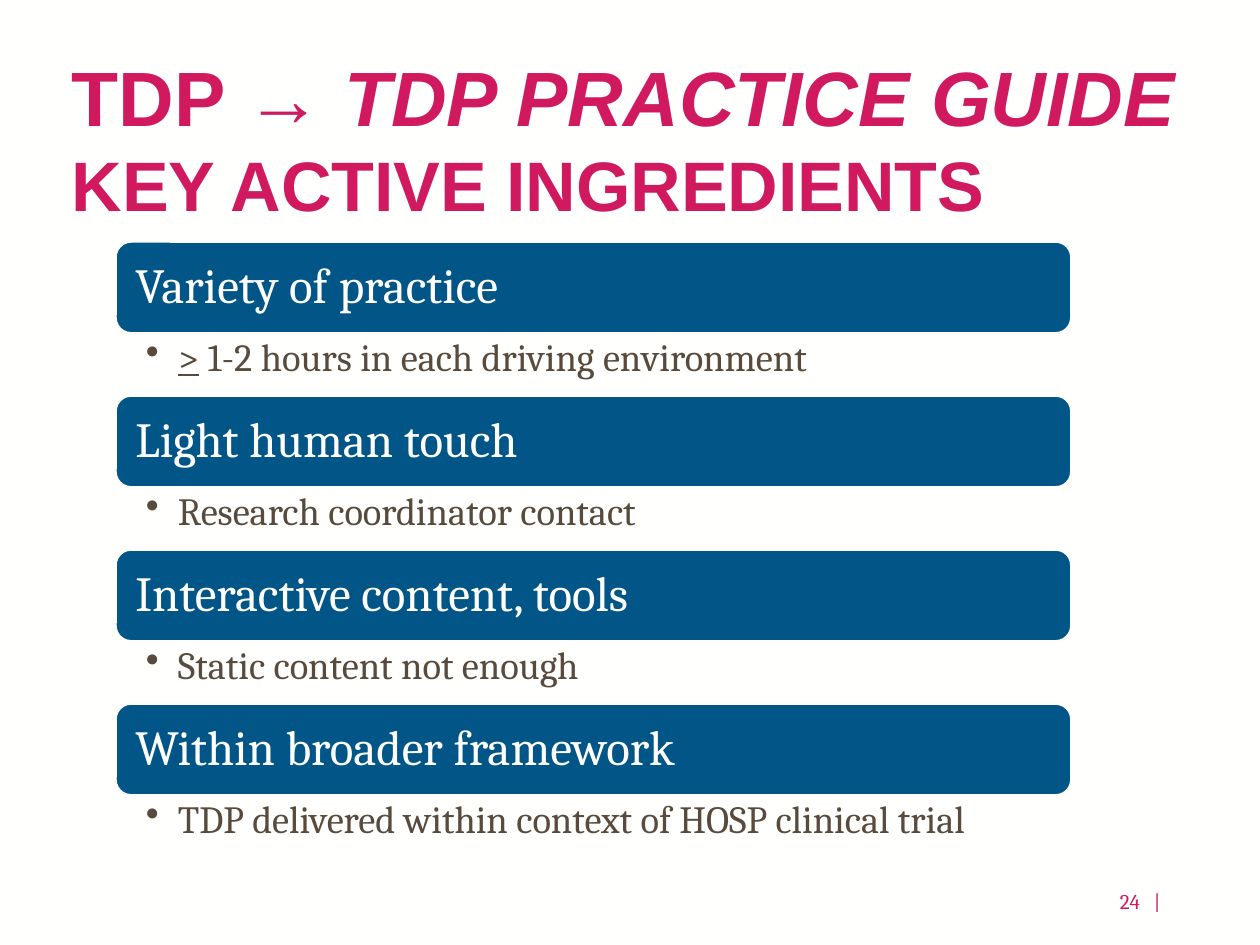
from pptx import Presentation
from pptx.dml.color import RGBColor
from pptx.enum.shapes import MSO_SHAPE as Shape
from pptx.enum.text import MSO_ANCHOR as Anchor, MSO_AUTO_SIZE as Fit, PP_ALIGN as Align
from pptx.oxml.ns import qn
from pptx.util import Emu, Pt
from lxml.etree import SubElement

# Content: a line is a list of (text, format) runs
TITLE = [
    [("TDP → ", {"size": 44}), ("TDP PRACTICE GUIDE", {"size": 44, "italic": True})],
    [("KEY ACTIVE INGREDIENTS", {"size": 40})],
]
ITEMS = [
    ("Variety of practice",
     [(">", {"underline": True}), (" 1-2 hours in each driving environment", {})]),
    ("Light human touch", [("Research coordinator contact", {})]),
    ("Interactive content, tools", [("Static content not enough", {})]),
    ("Within broader framework",
     [("TDP delivered within context of HOSP clinical trial", {})]),
]
PAGE = [("24", {}), (" ", {}), ("|", {})]

# Formats
PINK, BLUE, WHITE, BROWN = "D11960", "025587", "FFFFFE", "584B3D"
HEAD = {"name": "Arial", "bold": True, "color": PINK}
BAR = {"name": "Cambria", "size": 28, "color": WHITE}
NOTE = {"name": "Cambria", "size": 22, "color": BROWN}
FOOT = {"name": "Cambria", "size": 12, "color": PINK}

# Layout in px
LEFT, TOP, WIDE = 116, 242, 955
BAR_H, NOTE_H, STEP = 91, 64, 154


def px(n):
    return Emu(round(n * 914400 / 126))


def rgb(code):
    return RGBColor.from_string(code)


def write(para, runs, base):
    for text, extra in runs:
        run = para.add_run()
        run.text = text
        for key, val in {**base, **extra}.items():
            if key == "color":
                run.font.color.rgb = rgb(val)
            else:
                setattr(run.font, key, Pt(val) if key == "size" else val)


def setup(frame, **vals):
    base = {"word_wrap": True, "auto_size": Fit.NONE, "vertical_anchor": Anchor.TOP}
    for key, val in {**base, **vals}.items():
        setattr(frame, key, val)
    return frame


def margins(side, edge):
    return {"margin_left": px(side), "margin_right": px(side),
            "margin_top": px(edge), "margin_bottom": px(edge)}


def bullet(para):
    props = para._p.get_or_add_pPr()
    props.set("marL", str(px(32)))
    props.set("indent", str(-px(32)))
    SubElement(props, qn("a:buChar"), char="•")


prs = Presentation()
prs.slide_width, prs.slide_height = px(1260), px(945)
slide = prs.slides.add_slide(prs.slide_layouts[5])
slide.background.fill.solid()
slide.background.fill.fore_color.rgb = rgb(WHITE)
shapes = slide.shapes

# Title
title = shapes.title
title.left, title.top, title.width, title.height = map(px, (59, 43, 1201, 178))
frame = setup(title.text_frame)
for i, line in enumerate(TITLE):
    para = frame.add_paragraph() if i else frame.paragraphs[0]
    para.alignment = Align.LEFT
    write(para, line, HEAD)

# Bars, each with its bullet below
for i, (name, note) in enumerate(ITEMS):
    top = TOP + i * STEP
    bar = shapes.add_shape(Shape.ROUNDED_RECTANGLE, px(LEFT), px(top), px(WIDE), px(BAR_H))
    bar.shadow.inherit = False
    bar.fill.solid()
    bar.fill.fore_color.rgb = rgb(BLUE)
    bar.line.color.rgb = rgb(WHITE)
    bar.line.width = Pt(1)
    frame = setup(bar.text_frame, vertical_anchor=Anchor.MIDDLE, **margins(15, 15))
    para = frame.paragraphs[0]
    para.alignment, para.line_spacing = Align.LEFT, 0.9
    write(para, [(name, {})], BAR)

    box = shapes.add_textbox(px(LEFT), px(top + BAR_H), px(WIDE), px(NOTE_H))
    para = setup(box.text_frame, **margins(30, 5)).paragraphs[0]
    para.line_spacing = 0.9
    bullet(para)
    write(para, note, NOTE)

# Page number, with a widened gap before the rule
box = shapes.add_textbox(px(890), px(876), px(283), px(50))
para = setup(box.text_frame, vertical_anchor=Anchor.MIDDLE).paragraphs[0]
para.alignment = Align.RIGHT
write(para, PAGE, FOOT)
para.runs[1]._r.get_or_add_rPr().set("spc", "530")

prs.save("out.pptx")
